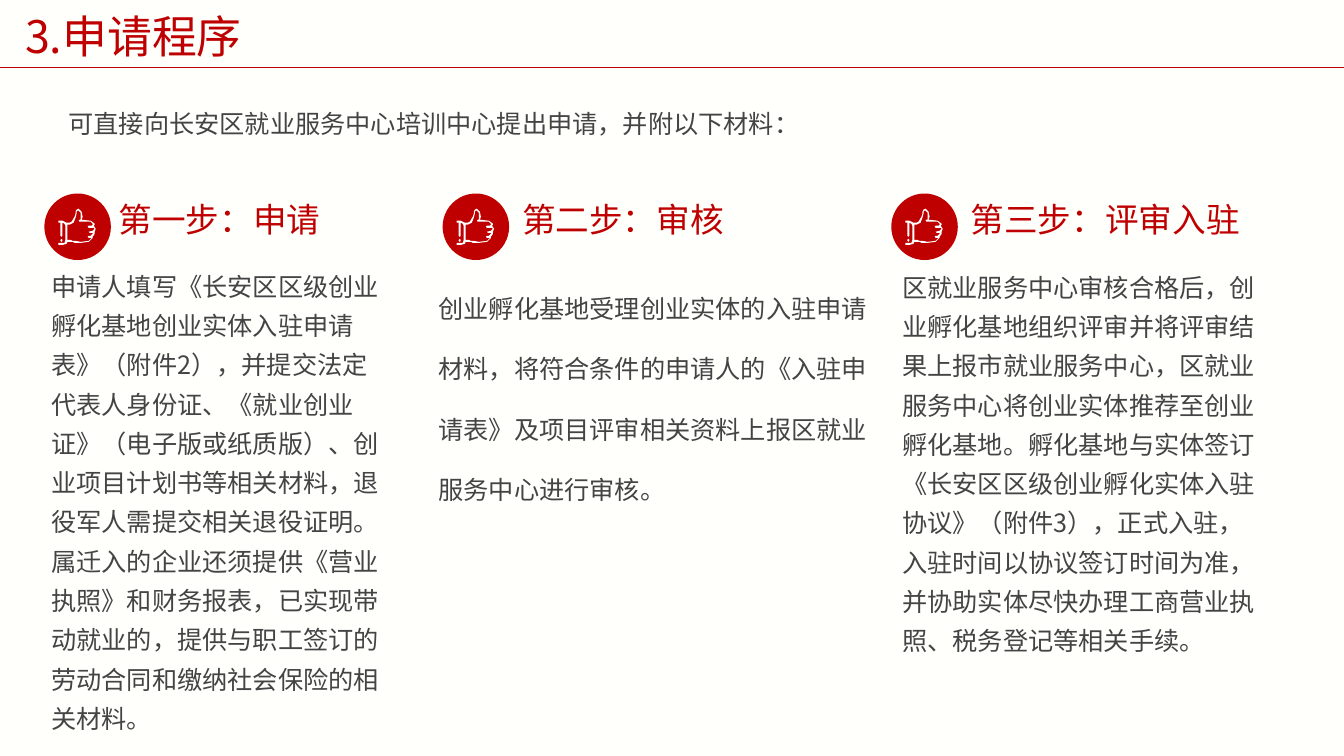
import pptx
import pptx.dml.color
import pptx.enum.shapes
import pptx.enum.text
import pptx.oxml
import pptx.oxml.ns
import pptx.util
from pptx.util import Inches

FONT = "Noto Sans CJK SC"
COLORS = {"back": "FFFFFC", "red": "BE0100", "text": "444444", "white": "FFFFFF"}

# Thumb outlines in hundredths of an inch: cuff slot, inner edge, outer edge
THUMB = [
    [(3, 30), (4, 31), (4, 32), (3, 33), (2, 32), (2, 31)],
    [(19, 2), (18, 3), (18, 5), (17, 9), (15, 14), (11, 16), (9, 16), (9, 31),
     (12, 31), (14, 32), (17, 32), (22, 33), (30, 32), (33, 29), (30, 29),
     (29, 28), (30, 27), (32, 27), (34, 25), (34, 24), (31, 24), (30, 23),
     (34, 22), (36, 20), (35, 19), (30, 19), (29, 18), (30, 17), (33, 17),
     (34, 16), (34, 15), (32, 13), (21, 13), (20, 12), (21, 11), (22, 11),
     (22, 4), (21, 3), (20, 2)],
    [(20, 0), (22, 2), (23, 3), (24, 8), (23, 11), (32, 12), (36, 15), (36, 16),
     (35, 17), (37, 20), (36, 23), (36, 25), (34, 28), (34, 29), (30, 33),
     (22, 34), (16, 34), (14, 33), (9, 33), (8, 35), (4, 36), (0, 36), (0, 34),
     (4, 34), (6, 34), (7, 31), (7, 17), (6, 15), (4, 14), (4, 27), (3, 28),
     (2, 27), (2, 14), (0, 14), (0, 12), (4, 12), (8, 14), (11, 14), (13, 13),
     (16, 8), (17, 5), (17, 3), (18, 1)],
]

# Icon left, heading box (left, width), heading, body box, line spacing, body
STEPS = [
    (0.44, (1.08, 2.67), "第一步：申请", (0.41, 2.55, 3.48, 4.43), 1.3,
     "申请人填写《长安区区级创业孵化基地创业实体入驻申请表》（附件2），"
     "并提交法定代表人身份证、《就业创业证》（电子版或纸质版）、"
     "创业项目计划书等相关材料，退役军人需提交相关退役证明。"
     "属迁入的企业还须提供《营业执照》和财务报表，已实现带动就业的，"
     "提供与职工签订的劳动合同和缴纳社会保险的相关材料。"),
    (4.39, (5.08, 2.67), "第二步：审核", (4.25, 2.56, 4.46, 2.52), 2.0,
     "创业孵化基地受理创业实体的入驻申请材料，将符合条件的申请人的"
     "《入驻申请表》及项目评审相关资料上报区就业服务中心进行审核。"),
    (8.84, (9.53, 3.05), "第三步：评审入驻", (8.85, 2.56, 3.73, 4.03), 1.3,
     "区就业服务中心审核合格后，创业孵化基地组织评审并将评审结果上报"
     "市就业服务中心，区就业服务中心将创业实体推荐至创业孵化基地。"
     "孵化基地与实体签订《长安区区级创业孵化实体入驻协议》（附件3），"
     "正式入驻，入驻时间以协议签订时间为准，"
     "并协助实体尽快办理工商营业执照、税务登记等相关手续。"),
]


def rgb(name):
    return pptx.dml.color.RGBColor.from_string(COLORS[name])


def paint(shape, color):
    """Give a flat fill without outline or shadow."""
    shape.shadow.inherit = False
    shape.fill.solid()
    shape.fill.fore_color.rgb = rgb(color)
    shape.line.fill.background()


def add_text(slide, box, text, size, color, space=None):
    shape = slide.shapes.add_textbox(*map(Inches, box))
    frame = shape.text_frame
    frame.word_wrap = True
    frame.auto_size = pptx.enum.text.MSO_AUTO_SIZE.SHAPE_TO_FIT_TEXT
    frame.text = text
    par = frame.paragraphs[0]
    if space:
        par.line_spacing = space
    font = par.runs[0].font
    font.size = pptx.util.Pt(size)
    font.name = FONT
    font.color.rgb = rgb(color)
    east = pptx.oxml.parse_xml(
        f'<a:ea {pptx.oxml.ns.nsdecls("a")} typeface="{FONT}"/>')
    par.runs[0]._r.rPr.find(pptx.oxml.ns.qn("a:latin")).addnext(east)
    return frame


def add_rule(slide, top):
    line = slide.shapes.add_connector(
        pptx.enum.shapes.MSO_CONNECTOR.STRAIGHT,
        0, Inches(top), Inches(13.33), Inches(top))
    line.line.color.rgb = rgb("red")
    line.line.width = pptx.util.Pt(0.5)
    line._element.spPr.append(pptx.oxml.parse_xml(
        f'<a:effectLst {pptx.oxml.ns.nsdecls("a")}/>'))


def add_icon(slide, left, top):
    """Draw a white thumb on a red disc."""
    group = slide.shapes.add_group_shape()
    disc = group.shapes.add_shape(
        pptx.enum.shapes.MSO_SHAPE.OVAL,
        Inches(left), Inches(top), Inches(0.66), Inches(0.66))
    paint(disc, "red")
    first, *rest = THUMB
    pen = group.shapes.build_freeform(*first[0], scale=Inches(0.01))
    pen.add_line_segments(first[1:])
    for edge in rest:
        pen.move_to(*edge[0])
        pen.add_line_segments(edge[1:])
    thumb = pen.convert_to_shape(Inches(left + 0.14), Inches(top + 0.15))
    paint(thumb, "white")


def add_step(slide, icon, head, title, box, space, body):
    left, width = head
    add_icon(slide, icon, 1.92)
    add_text(slide, (left, 1.92, width, 0.5), title, 24, "red")
    add_text(slide, box, body, 18, "text", space)


def main():
    deck = pptx.Presentation()
    deck.slide_width = Inches(13.33)
    deck.slide_height = Inches(7.5)
    slide = deck.slides.add_slide(deck.slide_layouts[6])
    slide.background.fill.solid()
    slide.background.fill.fore_color.rgb = rgb("back")

    add_rule(slide, 0.67)
    title = add_text(slide, (0.15, 0.03, 10.21, 0.64), "3.申请程序", 32, "red")
    title.vertical_anchor = pptx.enum.text.MSO_ANCHOR.MIDDLE
    for step in STEPS:
        add_step(slide, *step)
    add_text(slide, (0.58, 0.95, 12.01, 0.48),
             "可直接向长安区就业服务中心培训中心提出申请，并附以下材料：",
             18, "text", 1.25)
    deck.save("out.pptx")


if __name__ == "__main__":
    main()
